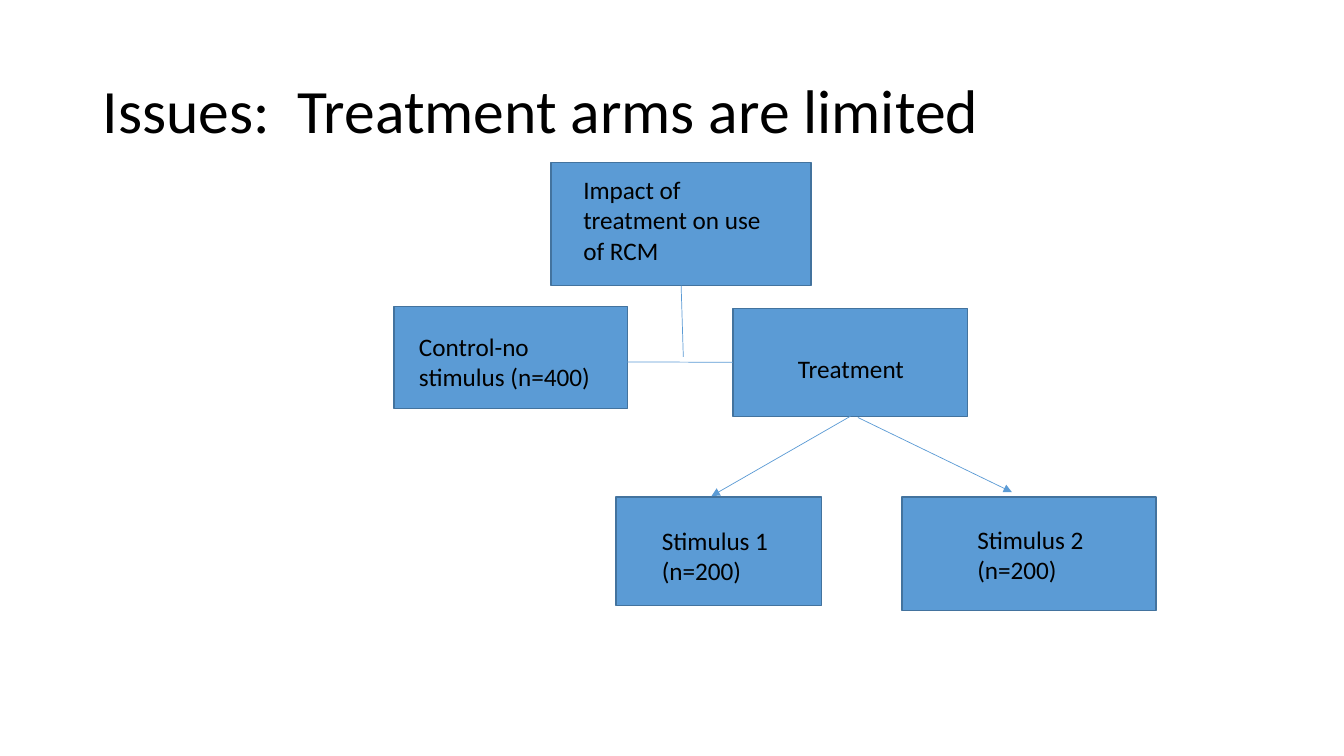
from dataclasses import dataclass

from pptx import Presentation
from pptx.dml.color import RGBColor
from pptx.enum import shapes, text
from pptx.oxml.ns import qn
from pptx.util import Cm, Pt
from lxml import etree

TITLE = ("Issues:  Treatment arms are limited", (2.34, 1.02, 29.21, 3.68))

# name: (box area, label, label area), areas as left, top, width, height in cm
ARMS = {
    "impact": ((13.89, 4.09, 6.55, 3.1), "Impact of treatment on use of RCM", (14.45, 4.27, 5.54, 2.57)),
    "control": ((9.93, 7.72, 5.89, 2.57), "Control-no stimulus (n=400)", (10.31, 8.23, 5.16, 1.8)),
    "treatment": ((18.47, 7.77, 5.92, 2.72), "Treatment", (19.86, 8.79, 3.56, 1.02)),
    "stimulus 1": ((15.52, 12.52, 5.18, 2.74), "Stimulus 1 (n=200)", (16.43, 13.11, 3.33, 1.8)),
    "stimulus 2": ((22.73, 12.52, 6.4, 2.87), "Stimulus 2 (n=200)", (24.38, 13.08, 3.33, 1.8)),
}

# start, end, arrowhead, joined start (arm, side), joined end (arm, side)
LINKS = [
    ((17.17, 7.19), (17.22, 8.99), False, ("impact", 2), None),
    ((15.77, 9.12), (18.47, 9.13), False, None, ("treatment", 1)),
    ((21.62, 10.52), (25.5, 12.4), True, None, None),
    ((21.43, 10.49), (17.93, 12.5), True, ("treatment", 2), None),
]


@dataclass(frozen=True)
class Theme:
    font: str = "Calibri"
    ink: RGBColor = RGBColor(0, 0, 0)
    fill: RGBColor = RGBColor(0x5B, 0x9B, 0xD5)
    border: RGBColor = RGBColor(0x43, 0x73, 0x9E)
    title_size: int = 44
    label_size: int = 18
    border_width: float = 1
    link_width: float = 0.5


THEME = Theme()


def add_text(page, wording, area, size, anchor=text.MSO_ANCHOR.TOP, spacing=1.0):
    frame = page.shapes.add_textbox(*map(Cm, area)).text_frame
    frame.word_wrap = True
    frame.vertical_anchor = anchor
    para = frame.paragraphs[0]
    para.line_spacing = spacing
    span = para.add_run()
    span.text = wording
    span.font.name = THEME.font
    span.font.size = Pt(size)
    span.font.color.rgb = THEME.ink


def add_box(page, area):
    box = page.shapes.add_shape(shapes.MSO_SHAPE.RECTANGLE, *map(Cm, area))
    box.shadow.inherit = False
    box.fill.solid()
    box.fill.fore_color.rgb = THEME.fill
    box.line.color.rgb = THEME.border
    box.line.width = Pt(THEME.border_width)
    return box


def add_link(page, boxes, start, end, arrow, joined_start, joined_end):
    link = page.shapes.add_connector(shapes.MSO_CONNECTOR.STRAIGHT, *map(Cm, start + end))
    if joined_start:
        arm, side = joined_start
        link.begin_connect(boxes[arm], side)
    if joined_end:
        arm, side = joined_end
        link.end_connect(boxes[arm], side)
    link.line.color.rgb = THEME.fill
    link.line.width = Pt(THEME.link_width)
    if arrow:
        etree.SubElement(link.line._get_or_add_ln(), qn("a:tailEnd"), type="triangle")
    etree.SubElement(link._element.spPr, qn("a:effectLst"))


def main():
    deck = Presentation()
    deck.slide_width, deck.slide_height = Cm(33.87), Cm(19.05)
    page = deck.slides.add_slide(deck.slide_layouts[6])

    wording, area = TITLE
    add_text(page, wording, area, THEME.title_size, text.MSO_ANCHOR.MIDDLE, 0.9)
    boxes = {name: add_box(page, area) for name, (area, _, _) in ARMS.items()}
    for link in LINKS:
        add_link(page, boxes, *link)
    for _, label, label_area in ARMS.values():
        add_text(page, label, label_area, THEME.label_size)

    deck.save("out.pptx")


if __name__ == "__main__":
    main()
